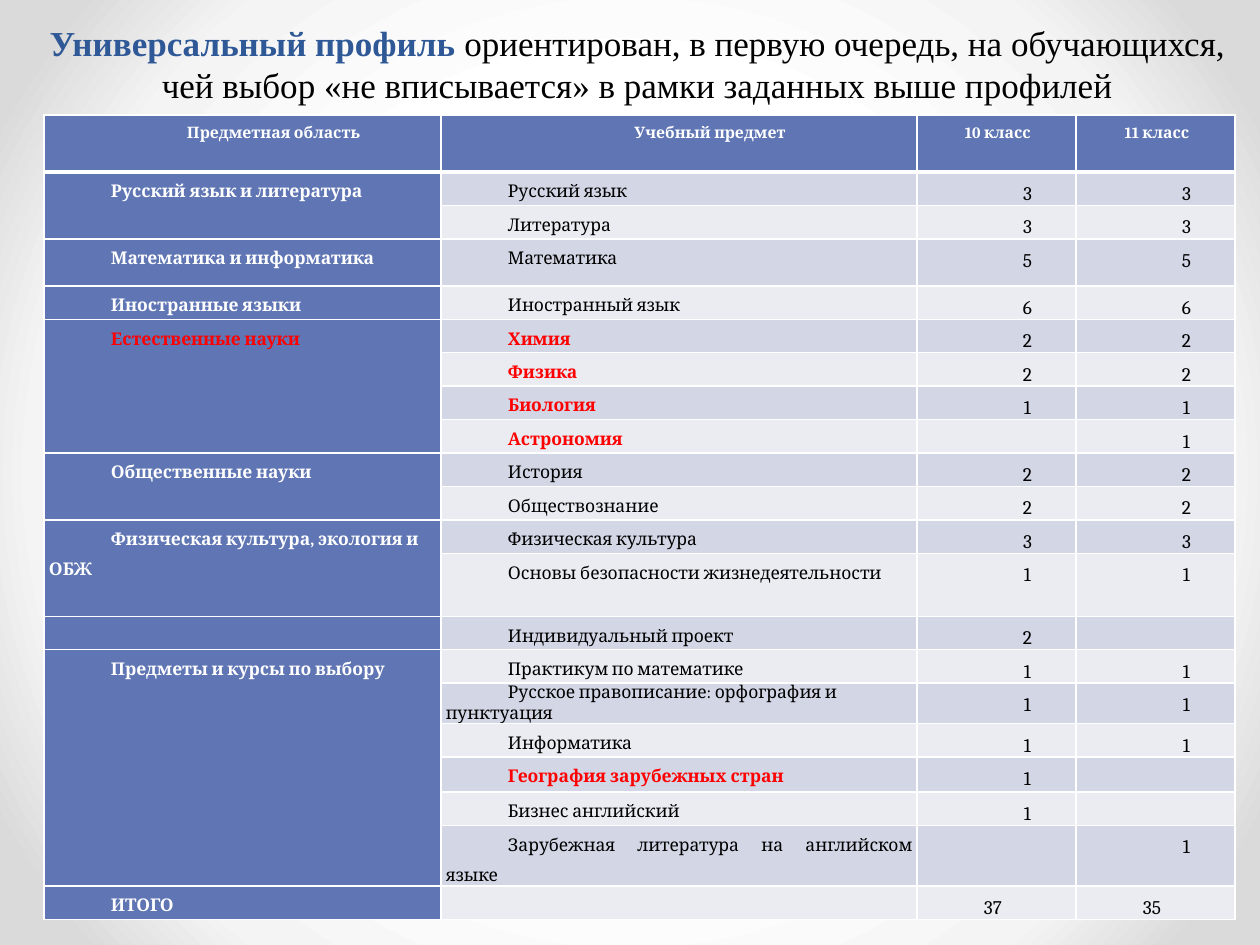
from pptx import Presentation
from pptx import util as u
from pptx.dml.color import RGBColor
from pptx.enum import shapes, text
from pptx.oxml import parse_xml
from pptx.oxml.ns import nsdecls, qn

BLUE = RGBColor(0x60, 0x76, 0xB4)
BAND_DARK = RGBColor(0xD2, 0xD6, 0xE5)
BAND_LIGHT = RGBColor(0xEA, 0xEC, 0xF2)
ACCENT = RGBColor(0x2F, 0x58, 0x97)
GRAY = RGBColor(0x80, 0x80, 0x80)
RED = RGBColor(0xFF, 0, 0)
BLACK = RGBColor(0, 0, 0)
WHITE = RGBColor(0xFF, 0xFF, 0xFF)

SCALE = u.Inches(1) / 126  # EMU per px
CENTER, JUSTIFY, LEFT = (text.PP_ALIGN.CENTER, text.PP_ALIGN.JUSTIFY,
                         text.PP_ALIGN.LEFT)

HEADER = ["Предметная область", "Учебный предмет", "10 класс", "11 класс"]
# Subject area -> subjects with hours in grades 10 and 11
AREAS = [
    ("Русский язык и литература", [("Русский язык", "3", "3"),
                                   ("Литература", "3", "3")]),
    ("Математика и информатика", [("Математика", "5", "5")]),
    ("Иностранные языки", [("Иностранный язык", "6", "6")]),
    ("Естественные науки", [("Химия", "2", "2"), ("Физика", "2", "2"),
                            ("Биология", "1", "1"), ("Астрономия", "", "1")]),
    ("Общественные науки", [("История", "2", "2"),
                            ("Обществознание", "2", "2")]),
    ("Физическая культура, экология и ОБЖ", [
        ("Физическая культура", "3", "3"),
        ("Основы безопасности жизнедеятельности", "1", "1")]),
    ("", [("Индивидуальный проект", "2", "")]),
    ("Предметы и курсы по выбору", [
        ("Практикум по математике", "1", "1"),
        ("Русское правописание: орфография и пунктуация", "1", "1"),
        ("Информатика", "1", "1"),
        ("География зарубежных стран", "1", ""),
        ("Бизнес английский", "1", ""),
        ("Зарубежная литература на английском языке", "", "1")]),
    ("ИТОГО", [("", "37", "35")]),
]
HIGHLIGHTED = {"Естественные науки", "Химия", "Физика", "Биология",
               "Астрономия", "География зарубежных стран"}
SINGLE_SPACED = "Русское правописание: орфография и пунктуация"
FIRST_JUSTIFIED = 17
COLUMNS = [397, 476, 159, 159]
ROW = 33
TALL_ROWS = {0: 57, 3: 47, 12: 63, 15: 34, 17: 35, 19: 35}


def px(n):
    return u.Emu(round(n * SCALE))


class Deck:
    def __init__(self):
        self.prs = Presentation()
        self.prs.slide_width, self.prs.slide_height = px(1260), px(945)
        self.s = self.prs.slides.add_slide(self.prs.slide_layouts[5])

    def background(self, stops):
        self.s.background.fill.gradient()
        grad = next(self.s.element.iter(qn("a:gradFill")))
        stops_xml = "".join(
            f'<a:gs pos="{pos * 1000}"><a:srgbClr val="{color}"/></a:gs>'
            for pos, color in stops)
        grad.getparent().replace(grad, parse_xml(
            f'<a:gradFill {nsdecls("a")} rotWithShape="1">'
            f'<a:gsLst>{stops_xml}</a:gsLst><a:path path="circle">'
            '<a:fillToRect l="50000" t="50000" r="50000" b="50000"/>'
            '</a:path></a:gradFill>'))

    def dot(self, x, y, size):
        sp = self.s.shapes.add_shape(shapes.MSO_SHAPE.OVAL,
                                     px(x), px(y), px(size), px(size))
        sp.shadow.inherit = False
        sp.fill.solid()
        sp.fill.fore_color.rgb = GRAY
        sp.line.fill.background()

    def run(self, p, words, color, **font):
        r = p.add_run()
        r.text = words
        r.font.color.rgb = color
        for name, value in font.items():
            setattr(r.font, name, value)

    def title(self, x, y, w, h, runs):
        sp = self.s.shapes.title
        sp.left, sp.top, sp.width, sp.height = map(px, (x, y, w, h))
        tf = sp.text_frame
        tf.word_wrap, tf.auto_size = True, text.MSO_AUTO_SIZE.NONE
        tf.vertical_anchor = text.MSO_ANCHOR.BOTTOM
        p = tf.paragraphs[0]
        p.alignment = CENTER
        for words, color, bold in runs:
            self.run(p, words, color, bold=bold, size=u.Pt(20),
                     name="Times New Roman")

    def table(self, x, y, cols, rows):
        self.tbl = self.s.shapes.add_table(
            len(rows), len(cols), px(x), px(y),
            px(sum(cols)), px(sum(rows))).table
        for col, w in zip(self.tbl.columns, cols):
            col.width = px(w)
        for row, h in zip(self.tbl.rows, rows):
            row.height = px(h)

    def cell(self, row, col, words, fill, color, size, bold, align,
             indent=62, spacing=1.5):
        c = self.tbl.cell(row, col)
        margins = dict(margin_left=px(5), margin_right=px(5),
                       margin_top=0, margin_bottom=0)
        for name, value in margins.items():
            setattr(c, name, value)
        # White borders, thicker below the header
        for side in "LRTB":
            thick = (row == 0 and side == "B") or (row == 1 and side == "T")
            c._tc.get_or_add_tcPr().append(parse_xml(
                f'<a:ln{side} {nsdecls("a")} w="{u.Pt(3 if thick else 1)}">'
                f'<a:solidFill><a:srgbClr val="{WHITE}"/></a:solidFill>'
                f'</a:ln{side}>'))
        c.fill.solid()
        c.fill.fore_color.rgb = fill
        p = c.text_frame.paragraphs[0]
        p.alignment, p.line_spacing = align, spacing
        p._p.get_or_add_pPr().set("indent", str(px(indent)))
        if words:
            self.run(p, words, color, size=u.Pt(size), bold=bold,
                     name="Cambria")
        else:  # keep empty cells from stretching the row
            p._p.append(parse_xml(
                f'<a:endParaRPr {nsdecls("a")} sz="{size * 100}"/>'))


def main():
    d = Deck()
    d.background([(50, "FFFFFF"), (76, "F4F4F4"), (92, "DADADA")])
    for x in (78, 1165):
        d.dot(x, 896, 12)
    d.title(15, -83, 1245, 195, [
        ("Универсальный профиль ", ACCENT, True),
        ("ориентирован, в первую очередь, на обучающихся, чей выбор "
         "«не вписывается» в рамки заданных выше профилей", BLACK, False)])

    # Table header
    count = 1 + sum(len(subjects) for _, subjects in AREAS)
    d.table(44, 115, COLUMNS, [TALL_ROWS.get(i, ROW) for i in range(count)])
    for col, words in enumerate(HEADER):
        d.cell(0, col, words, BLUE, WHITE, 9, True, CENTER,
               indent=62 if col < 2 else 3)

    # Subject areas, each merged over its subjects
    row = 1
    for area, subjects in AREAS:
        first, total = row, area == "ИТОГО"
        for subject, *hours in subjects:
            band = BAND_DARK if row % 2 else BAND_LIGHT
            align = JUSTIFY if row >= FIRST_JUSTIFIED else LEFT
            red = subject in HIGHLIGHTED
            d.cell(row, 0, area if row == first else "", BLUE,
                   RED if area in HIGHLIGHTED else WHITE, 10, True,
                   JUSTIFY if total else LEFT)
            d.cell(row, 1, subject, band, RED if red else BLACK, 10, red,
                   align, spacing=1.0 if subject == SINGLE_SPACED else 1.5)
            for col, value in enumerate(hours, 2):
                d.cell(row, col, value, band, BLACK, 11, False,
                       JUSTIFY if total else CENTER)
            row += 1
        if len(subjects) > 1:
            d.tbl.cell(first, 0).merge(d.tbl.cell(row - 1, 0))
    d.prs.save("out.pptx")


if __name__ == "__main__":
    main()
